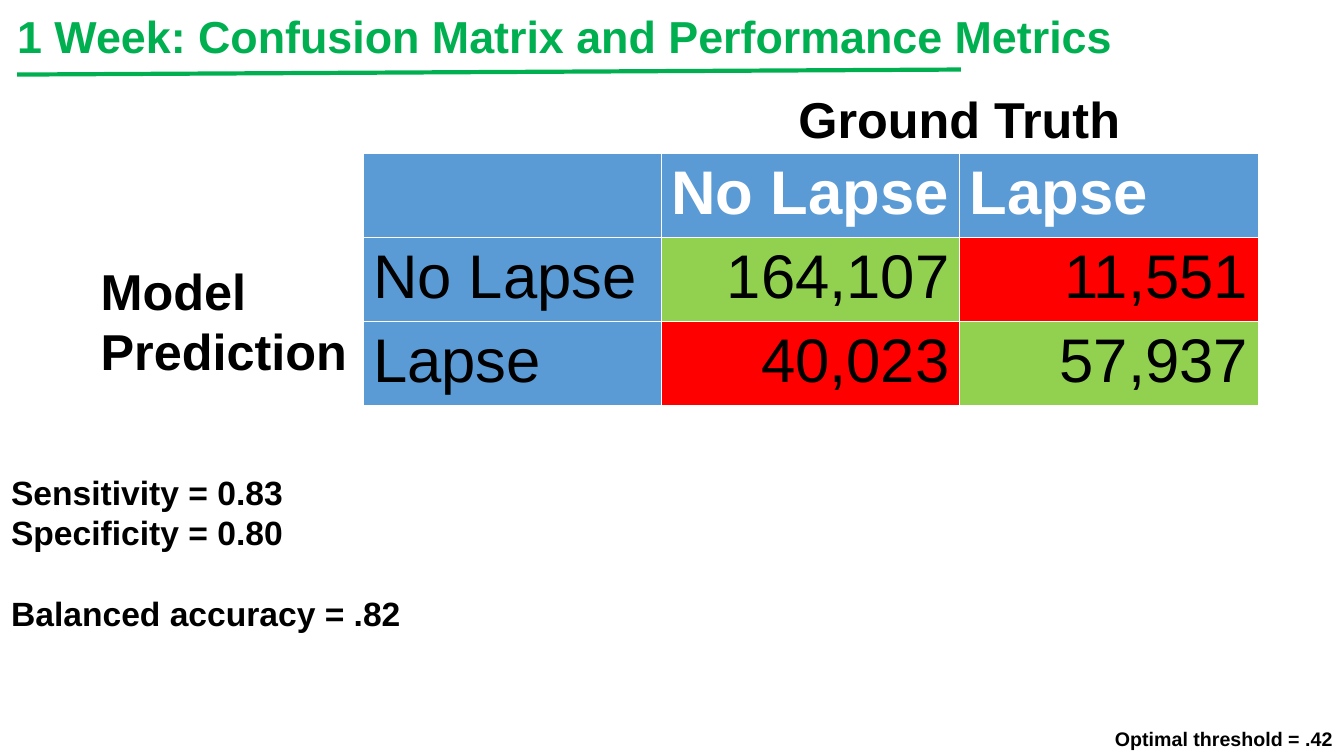
import pptx
import pptx.dml.color
import pptx.enum.shapes
import pptx.enum.text
import pptx.oxml.ns
import pptx.util
from lxml import etree

RGBColor = pptx.dml.color.RGBColor
GREEN = RGBColor(0x00, 0xB0, 0x50)
BLUE = RGBColor(0x5B, 0x9B, 0xD5)
CORRECT = RGBColor(0x92, 0xD0, 0x50)
WRONG = RGBColor(0xFF, 0x00, 0x00)
BLACK = RGBColor(0x00, 0x00, 0x00)
WHITE = RGBColor(0xFF, 0xFF, 0xFF)

LEFT = pptx.enum.text.PP_ALIGN.LEFT
RIGHT = pptx.enum.text.PP_ALIGN.RIGHT
ANCHOR_TOP = pptx.enum.text.MSO_ANCHOR.TOP
FIT_SHAPE = pptx.enum.text.MSO_AUTO_SIZE.SHAPE_TO_FIT_TEXT

EMU_PER_PX = 9144
FONT = "Arial"
CLASSES = ["No Lapse", "Lapse"]
COUNTS = [["164,107", "11,551"], ["40,023", "57,937"]]
METRICS = ["Sensitivity = 0.83", "Specificity = 0.80", "Balanced accuracy = .82"]


def px(length):
    return pptx.util.Emu(length * EMU_PER_PX)


def set_attributes(target, values):
    for name, value in values.items():
        setattr(target, name, value)


def format_paragraph(paragraph, size, color, bold=True, alignment=LEFT):
    paragraph.alignment = alignment
    set_attributes(paragraph.font, {"name": FONT, "size": pptx.util.Pt(size), "bold": bold})
    paragraph.font.color.rgb = color


def write_lines(shape, box, lines, size, color=BLACK, wrap=True):
    set_attributes(shape, dict(zip(("left", "top", "width", "height"), map(px, box))))
    frame = shape.text_frame
    frame.text = "\n".join(lines)
    set_attributes(frame, {"word_wrap": wrap, "auto_size": FIT_SHAPE, "vertical_anchor": ANCHOR_TOP})
    for paragraph in frame.paragraphs:
        format_paragraph(paragraph, size, color)


def add_label(slide, box, lines, size):
    label = slide.shapes.add_textbox(*map(px, box))
    write_lines(label, box, lines, size, wrap=False)


def add_metrics(shape):
    write_lines(shape, (1, 463, 1275, 172), METRICS, 24)
    for paragraph in shape.text_frame.paragraphs:
        properties = paragraph._p.get_or_add_pPr()
        properties.set("marL", "0")
        properties.set("indent", "0")
        etree.SubElement(properties, pptx.oxml.ns.qn("a:buNone"))
        paragraph.space_before = pptx.util.Pt(0)
        format_paragraph(paragraph, 24, BLACK)
    shape.text_frame.paragraphs[-1].space_before = pptx.util.Pt(29)


def add_title_rule(slide):
    rule = slide.shapes.add_connector(
        pptx.enum.shapes.MSO_CONNECTOR.STRAIGHT, px(17), px(74), px(953), px(69))
    rule.line.color.rgb = GREEN
    rule.line.width = pptx.util.Pt(3)
    etree.SubElement(rule._element.spPr, pptx.oxml.ns.qn("a:effectLst"))


def fill_cell(cell, text, fill, color=BLACK, bold=False, alignment=LEFT):
    cell.fill.solid()
    cell.fill.fore_color.rgb = fill
    cell.text = text
    format_paragraph(cell.text_frame.paragraphs[0], 44, color, bold, alignment)


def add_confusion_matrix(slide):
    table = slide.shapes.add_table(3, 3, px(360), px(152), px(888), px(249)).table
    table.horz_banding = False
    for column, heading in enumerate(["", *CLASSES]):
        fill_cell(table.cell(0, column), heading, BLUE, WHITE, bold=True)
    for row, (name, counts) in enumerate(zip(CLASSES, COUNTS), start=1):
        fill_cell(table.cell(row, 0), name, BLUE)
        for column, count in enumerate(counts, start=1):
            fill = CORRECT if row == column else WRONG
            fill_cell(table.cell(row, column), count, fill, alignment=RIGHT)


def main():
    presentation = pptx.Presentation()
    set_attributes(presentation, {"slide_width": px(1333), "slide_height": px(750)})
    slide = presentation.slides.add_slide(presentation.slide_layouts[1])
    title, body = slide.placeholders
    add_title_rule(slide)
    write_lines(title, (7, 4, 1300, 64),
                ["1 Week: Confusion Matrix and Performance Metrics"], 32, GREEN)
    add_confusion_matrix(slide)
    add_label(slide, (782, 82, 343, 71), ["Ground Truth"], 36)
    add_label(slide, (90, 253, 267, 131), ["Model", "Prediction"], 36)
    add_metrics(body)
    add_label(slide, (1096, 716, 237, 34), ["Optimal threshold = .42"], 14)
    presentation.save("out.pptx")


if __name__ == "__main__":
    main()
